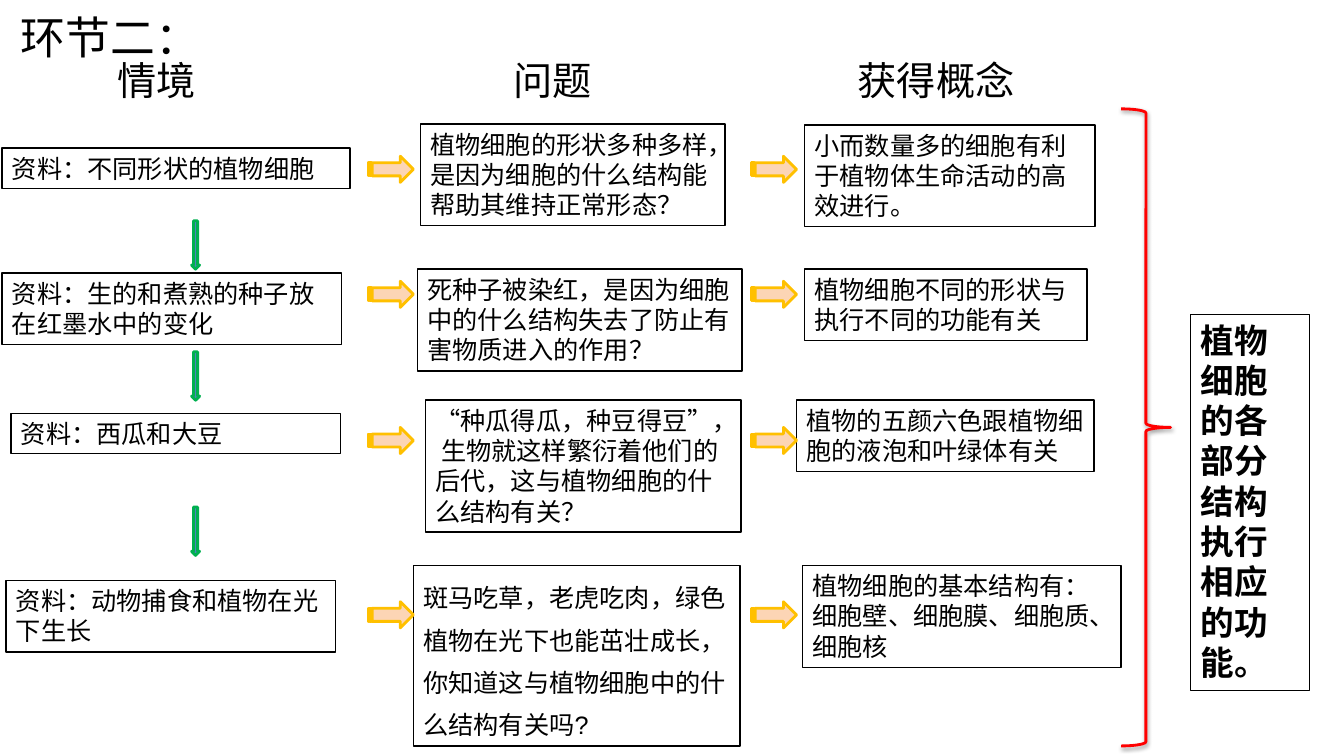
from dataclasses import dataclass

from lxml.etree import SubElement
from pptx import Presentation
from pptx.dml.color import RGBColor
from pptx.enum.shapes import MSO_SHAPE as Preset
from pptx.enum.text import MSO_AUTO_SIZE as AutoSize
from pptx.oxml.ns import qn
from pptx.shapes.autoshape import Shape
from pptx.util import Inches, Pt

BLACK = RGBColor(0x00, 0x00, 0x00)
RED = RGBColor(0xFF, 0x00, 0x00)
PEACH = RGBColor(0xFC, 0xD5, 0xB5)
AMBER = RGBColor(0xFF, 0xC0, 0x00)
BLUE = RGBColor(0x4F, 0x81, 0xBD)
GREEN = RGBColor(0x00, 0xB0, 0x50)


@dataclass(frozen=True)
class Label:
    text: str
    left: float
    top: float
    width: float
    height: float
    size: int = 18
    font: str = "Calibri"
    bold: bool = False
    framed: bool = True
    line_spacing: float = 1.0


@dataclass(frozen=True)
class Stage:
    material: Label
    question: Label
    concept: Label
    arrow_top: float


HEADINGS = [
    Label("环节二：", 0.11, 0.05, 4.73, 0.64, size=32, framed=False),
    Label("情境", 1.07, 0.51, 1.18, 0.57, size=28, framed=False),
    Label("问题", 4.99, 0.51, 1.32, 0.57, size=28, framed=False),
    Label("获得概念", 8.41, 0.51, 1.77, 0.57, size=28, framed=False),
]

STAGES = [
    Stage(
        Label("资料：不同形状的植物细胞", 0.02, 1.47, 3.45, 0.4),
        Label("植物细胞的形状多种多样，是因为细胞的什么结构能帮助其维持正常形态？",
              4.17, 1.23, 3.02, 1.01, font="Arial"),
        Label("小而数量多的细胞有利于植物体生命活动的高效进行。", 7.98, 1.24, 2.88, 1.01),
        1.55,
    ),
    Stage(
        Label("资料：生的和煮熟的种子放在红墨水中的变化", 0.02, 2.71, 3.37, 0.71),
        Label("死种子被染红，是因为细胞中的什么结构失去了防止有害物质进入的作用？",
              4.14, 2.67, 3.22, 1.01, font="Arial"),
        Label("植物细胞不同的形状与执行不同的功能有关", 7.98, 2.67, 2.8, 0.71),
        2.79,
    ),
    Stage(
        Label("资料：西瓜和大豆", 0.11, 4.1, 3.27, 0.4),
        Label("“种瓜得瓜，种豆得豆”， 生物就这样繁衍着他们的后代，这与植物细胞的什么结构有关？",
              4.22, 3.97, 3.13, 1.31, font="Arial"),
        Label("植物的五颜六色跟植物细胞的液泡和叶绿体有关", 7.9, 3.97, 2.95, 0.71),
        4.24,
    ),
    Stage(
        Label("资料：动物捕食和植物在光下生长", 0.06, 5.76, 3.27, 0.71),
        Label("斑马吃草，老虎吃肉，绿色植物在光下也能茁壮成长，你知道这与植物细胞中的什么结构有关吗?",
              4.1, 5.61, 3.24, 1.79, font="Arial", line_spacing=1.4),
        Label("植物细胞的基本结构有：细胞壁、细胞膜、细胞质、细胞核", 7.96, 5.61, 3.16, 1.01),
        5.97,
    ),
]

CONCLUSION = Label("植物细胞的各部分结构执行相应的功能。", 11.81, 3.12, 1.18, 3.73, size=24, bold=True)
RIGHT_ARROW_LEFTS = (3.65, 7.45)
DOWN_ARROW_TOPS = (2.19, 3.49, 5.03)


def add_label(page, label: Label) -> None:
    box = page.shapes.add_textbox(
        Inches(label.left), Inches(label.top), Inches(label.width), Inches(label.height))
    if label.framed:
        box.line.color.rgb = BLACK
        box.line.width = Pt(1)
    frame = box.text_frame
    frame.word_wrap = True
    frame.auto_size = AutoSize.SHAPE_TO_FIT_TEXT
    para = frame.paragraphs[0]
    para.line_spacing = label.line_spacing
    span = para.add_run()
    span.text = label.text
    span.font.name = label.font
    span.font.size = Pt(label.size)
    span.font.bold = label.bold
    span.font.color.rgb = BLACK


def add_mark(page, preset: Preset, left: float, top: float, width: float, height: float,
             outline: RGBColor, fill: RGBColor | None = None) -> Shape:
    mark = page.shapes.add_shape(
        preset, Inches(left), Inches(top), Inches(width), Inches(height))
    mark.shadow.inherit = False
    if fill is None:
        mark.fill.background()
    else:
        mark.fill.solid()
        mark.fill.fore_color.rgb = fill
    mark.line.color.rgb = outline
    mark.line.width = Pt(2)
    return mark


def add_soft_shadow(mark: Shape) -> None:
    effects = mark._element.spPr.find(qn("a:effectLst"))
    shadow = SubElement(effects, qn("a:outerShdw"), blurRad=str(Pt(3.1)), dist=str(Pt(1.6)),
                        dir="5400000", rotWithShape="0")
    colour = SubElement(shadow, qn("a:srgbClr"), val=str(BLACK))
    SubElement(colour, qn("a:alpha"), val="38000")


def main() -> None:
    deck = Presentation()
    deck.slide_width, deck.slide_height = Inches(13.33), Inches(7.5)
    page = deck.slides.add_slide(deck.slide_layouts[6])

    # Title and column headings
    for heading in HEADINGS:
        add_label(page, heading)

    # Each stage: material, question, concept, with arrows between
    for stage in STAGES:
        for label in (stage.material, stage.question, stage.concept):
            add_label(page, label)
        for left in RIGHT_ARROW_LEFTS:
            add_mark(page, Preset.STRIPED_RIGHT_ARROW, left, stage.arrow_top, 0.45, 0.26,
                     AMBER, PEACH)

    # Arrows leading from one material to the next
    for top in DOWN_ARROW_TOPS:
        add_mark(page, Preset.DOWN_ARROW, 1.9, top, 0.08, 0.48, GREEN, BLUE)

    # Brace gathering the concepts into the conclusion
    add_soft_shadow(add_mark(page, Preset.RIGHT_BRACE, 11.12, 1.08, 0.49, 6.32, RED))
    add_label(page, CONCLUSION)

    deck.save("out.pptx")


if __name__ == "__main__":
    main()
